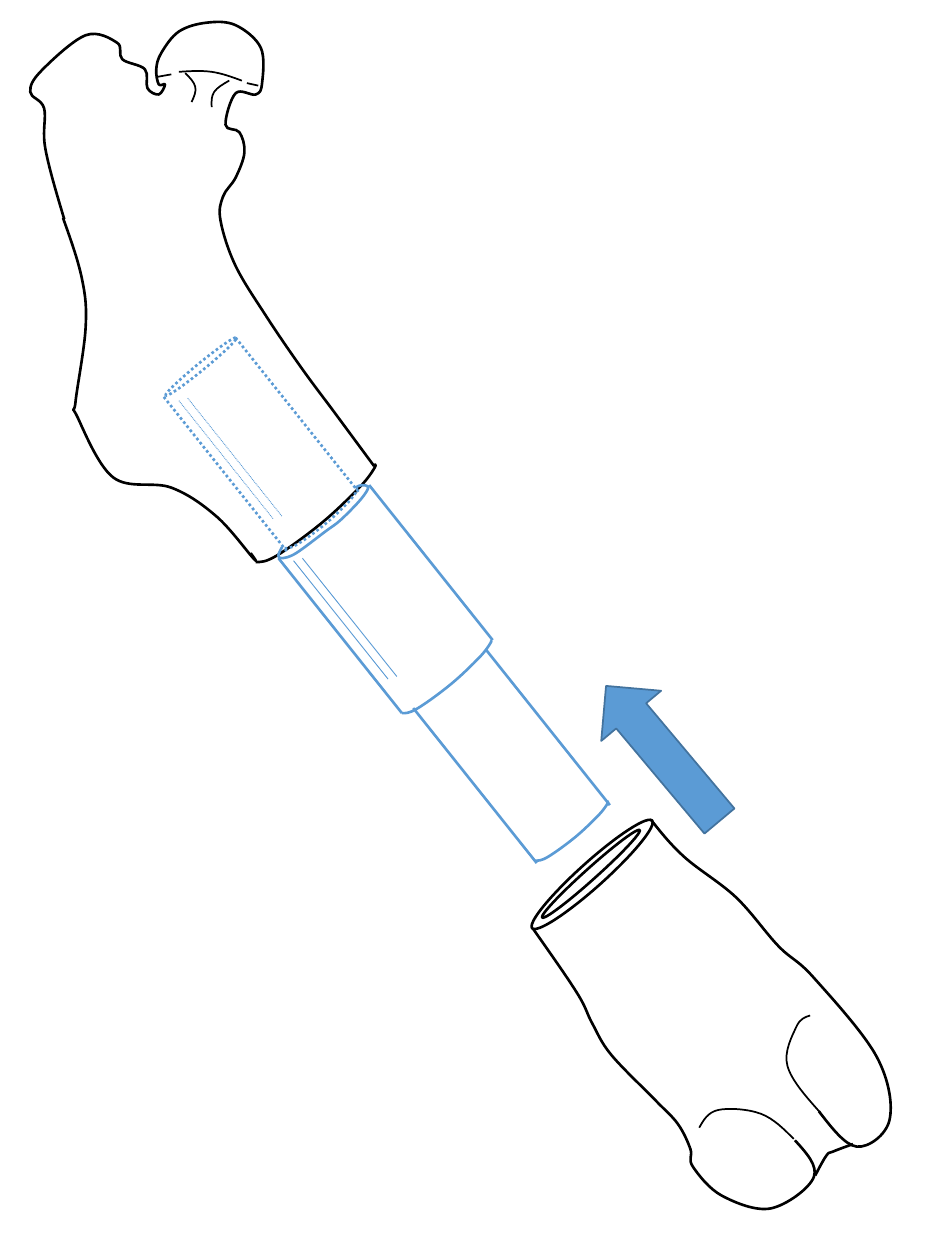
import math

import pptx
import pptx.dml.color
import pptx.enum.dml
import pptx.enum.shapes
import pptx.oxml
import pptx.oxml.ns
import pptx.util
from pptx.util import Cm

COLORS = {"bone": "000000", "implant": "5B9BD5", "arrow_edge": "43739E"}
UPPER_TILT, LOWER_TILT = 320.7, 318.1
WALL, SHADING = (0.98, 1.23), (0.75, 0.94)

# Points that each smooth curve passes through, in inches.
UPPER_BONE = [
    [(0.51, 1.74), (0.36, 1.18), (0.35, 0.86), (0.24, 0.73), (0.33, 0.56), (0.68, 0.28),
     (0.93, 0.34), (0.97, 0.47), (1.15, 0.55), (1.17, 0.7), (1.26, 0.75), (1.31, 0.67),
     (1.26, 0.67), (1.24, 0.55), (1.28, 0.42), (1.42, 0.25), (1.64, 0.18), (1.87, 0.2),
     (2.07, 0.38), (2.08, 0.66), (2.03, 0.75), (1.87, 0.74), (1.79, 0.99), (1.9, 1.05),
     (1.94, 1.21), (1.87, 1.41), (1.77, 1.56), (1.75, 1.75), (1.87, 2.11), (2.12, 2.52),
     (2.4, 2.93), (2.66, 3.28), (2.97, 3.7)],
    [(0.5, 1.73), (0.65, 2.21), (0.68, 2.6), (0.6, 3.19), (0.61, 3.3), (0.9, 3.79),
     (1.36, 3.87), (1.72, 4.1), (2.01, 4.43), (1.99, 4.39)],
]
HEAD_DETAILS = [
    [(1.42, 0.57), (1.68, 0.57), (1.92, 0.64)],
    [(1.47, 0.58), (1.55, 0.69), (1.52, 0.81)],
    [(1.82, 0.64), (1.7, 0.73), (1.68, 0.85)],
    [(1.25, 0.61), (1.36, 0.59)],
    [(1.96, 0.66), (2.05, 0.68)],
]
COLLAR = [(2.24, 4.34), (2.21, 4.41), (2.24, 4.43), (2.35, 4.39), (2.58, 4.22), (2.7, 4.13),
          (2.84, 3.99), (2.91, 3.9), (2.92, 3.86), (2.87, 3.85), (2.82, 3.87)]
RIM = [(0, 0), (0.1, -0.03), (0.32, -0.19), (0.5, -0.36), (0.57, -0.45), (0.57, -0.47)]
LOWER_BONE = [
    [(4.23, 7.37), (4.58, 7.88), (4.7, 8.12), (4.85, 8.37), (5.2, 8.73), (5.38, 8.92),
     (5.48, 9.12), (5.5, 9.26), (5.73, 9.49), (6.12, 9.59), (6.46, 9.34), (6.31, 9.05)],
    [(6.5, 8.82), (6.8, 9.1), (7.06, 8.89), (6.96, 8.39), (6.46, 7.76), (6.18, 7.51),
     (5.84, 7.12), (5.43, 6.8), (5.17, 6.51)],
    [(6.47, 9.33), (6.56, 9.17), (6.61, 9.14), (6.77, 9.08)],
]
CONDYLE_DETAILS = [
    [(6.3, 9.04), (6.04, 8.84), (5.7, 8.81), (5.55, 8.95)],
    [(6.51, 8.83), (6.25, 8.46), (6.32, 8.15), (6.43, 8.06)],
]


def inch(value):
    return Cm(2.54 * value)


def set_line(sp, color, width, dotted=False):
    sp.line.color.rgb = pptx.dml.color.RGBColor.from_string(COLORS[color])
    sp.line.width = pptx.util.Pt(width)
    if dotted:
        sp.line.dash_style = pptx.enum.dml.MSO_LINE.ROUND_DOT


def smooth(knots):
    """Return the start, then two controls and an end for each Bezier segment."""
    last = len(knots) - 1
    slopes = [(knots[min(i + 1, last)] - knots[max(i - 1, 0)]) / 6 for i in range(last + 1)]
    points = [knots[0]]
    for i in range(last):
        first, second = knots[i] + slopes[i], knots[i + 1] - slopes[i + 1]
        if i == 0:
            first = (knots[0] + second) / 2
        if i == last - 1:
            second = (knots[last] + first) / 2
        points += [first, second, knots[i + 1]]
    return points


def add_curve(s, knots, tilt, color, width=1.5, dotted=False):
    """Add an open curve whose frame is turned by tilt degrees."""
    angle = math.radians(tilt)
    turn = complex(math.cos(angle), math.sin(angle))
    points = smooth([complex(inch(x), inch(y)) / turn for x, y in knots])
    points = [(round(z.real), round(z.imag)) for z in points]
    builder = s.shapes.build_freeform(*points[0], scale=1.0)
    builder.add_line_segments(points[1:], close=False)
    sp = builder.convert_to_shape()
    center = turn * complex(sp.left + sp.width / 2, sp.top + sp.height / 2)
    sp.left = round(center.real - sp.width / 2)
    sp.top = round(center.imag - sp.height / 2)
    sp.rotation = tilt
    segments = list(sp._element.iter(pptx.oxml.ns.qn("a:lnTo")))
    for i in range(0, len(segments), 3):
        bezier = pptx.oxml.parse_xml(f"<a:cubicBezTo {pptx.oxml.ns.nsdecls('a')}/>")
        segments[i].addprevious(bezier)
        for segment in segments[i:i + 3]:
            bezier.append(segment[0])
            segment.getparent().remove(segment)
    sp.shadow.inherit = False
    sp.fill.background()
    set_line(sp, color, width, dotted)
    return sp


def add_rim(s, x, y, size, color, dotted=False):
    knots = [(x + size * dx, y + size * dy) for dx, dy in RIM]
    return add_curve(s, knots, UPPER_TILT, color, dotted=dotted)


def add_edge(s, x, y, vector, width=1.5, dotted=False):
    """Add a straight implant line running along the shaft."""
    line = s.shapes.add_connector(
        pptx.enum.shapes.MSO_CONNECTOR.STRAIGHT,
        inch(x), inch(y), inch(x + vector[0]), inch(y + vector[1]))
    set_line(line, "implant", width, dotted)
    line._element.spPr.append(
        pptx.oxml.parse_xml(f"<a:effectLst {pptx.oxml.ns.nsdecls('a')}/>"))
    return line


def add_preset(s, kind, box, tilt, color, width=1.5, dotted=False, fill=None):
    sp = s.shapes.add_shape(kind, *map(inch, box))
    sp.rotation = tilt
    sp.shadow.inherit = False
    if fill:
        sp.fill.solid()
        sp.fill.fore_color.rgb = pptx.dml.color.RGBColor.from_string(COLORS[fill])
    else:
        sp.fill.background()
    set_line(sp, color, width, dotted)
    return sp


def add_upper_bone_with_implant(s):
    oval = pptx.enum.shapes.MSO_SHAPE.OVAL
    parts = [add_curve(s, knots, UPPER_TILT, "bone") for knots in UPPER_BONE]
    parts += [add_curve(s, knots, UPPER_TILT, "bone", 1) for knots in HEAD_DETAILS]
    parts.append(add_rim(s, 2.03, 4.46, 1.65, "bone"))
    parts.append(add_preset(s, oval, (1.23, 2.88, 0.73, 0.06), UPPER_TILT, "implant", dotted=True))
    for x, y in [(1.3, 3.15), (1.87, 2.68)]:
        parts.append(add_edge(s, x, y, WALL, dotted=True))
    for x, y in [(3.28, 5.62), (3.86, 5.16), (2.21, 4.43), (2.93, 3.85)]:
        parts.append(add_edge(s, x, y, WALL))
    for x, y, dotted in [(2.33, 4.45, False), (1.42, 3.18, True)]:
        parts.append(add_edge(s, x, y, SHADING, 0.5, dotted))
        parts.append(add_edge(s, x + 0.07, y - 0.02, SHADING, 0.5, dotted))
    parts.append(add_rim(s, 4.25, 6.83, 1, "implant"))
    parts.append(add_rim(s, 3.19, 5.66, 1.23, "implant"))
    parts.append(add_curve(s, COLLAR, UPPER_TILT, "implant"))
    parts.append(add_rim(s, 2.26, 4.35, 1, "implant", dotted=True))
    s.shapes.add_group_shape(parts)


def add_lower_bone(s):
    parts = [add_curve(s, knots, LOWER_TILT, "bone") for knots in LOWER_BONE]
    parts += [add_curve(s, knots, LOWER_TILT, "bone", 1) for knots in CONDYLE_DETAILS]
    for box in [(4.06, 6.84, 1.28, 0.2), (4.17, 6.89, 1.04, 0.09)]:
        parts.append(add_preset(s, pptx.enum.shapes.MSO_SHAPE.OVAL, box, LOWER_TILT, "bone"))
    s.shapes.add_group_shape(parts)


def main():
    prs = pptx.Presentation()
    prs.slide_width, prs.slide_height = Cm(19.05), Cm(25.4)
    s = prs.slides.add_slide(prs.slide_layouts[6])
    add_upper_bone_with_implant(s)
    add_lower_bone(s)
    add_preset(s, pptx.enum.shapes.MSO_SHAPE.DOWN_ARROW, (4.95, 5.28, 0.62, 1.4), 140,
               "arrow_edge", 1, fill="implant")
    prs.save("out.pptx")


if __name__ == "__main__":
    main()
